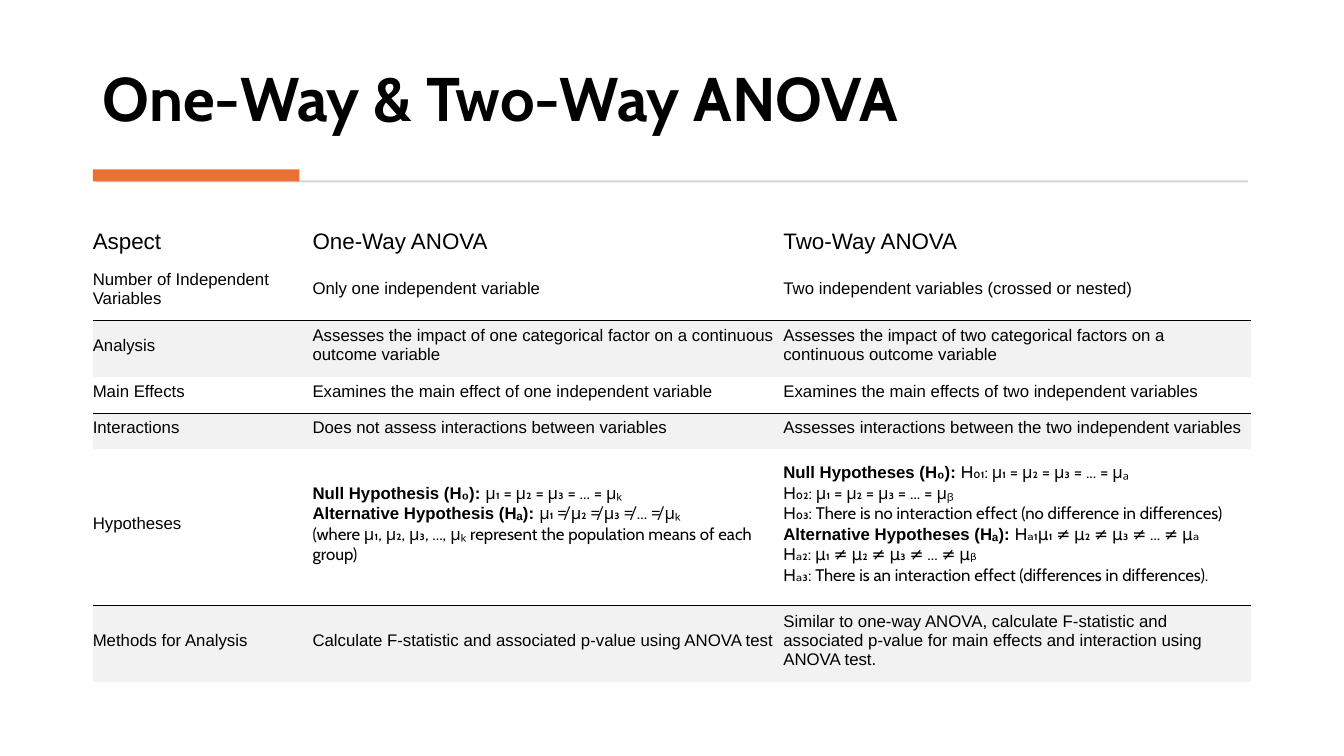
import pptx
import pptx.dml.color
import pptx.enum.text
import pptx.oxml
import pptx.oxml.ns
import pptx.util
from pptx.util import Inches

COLORS = {"text": "000000", "accent": "E97132", "rule": "D5D5D5", "band": "F2F2F2"}
ANCHOR = pptx.enum.text.MSO_ANCHOR
COLUMN_WIDTHS = [2.18, 4.67, 4.64]
ROW_HEIGHTS = [0.42, 0.56, 0.56, 0.36, 0.36, 1.55, 0.76]
ONE_WAY_HYPOTHESES = [
    ("Null Hypothesis (H₀): ", "μ₁ = μ₂ = μ₃ = ... = μₖ"),
    ("Alternative Hypothesis (Hₐ): ", "μ₁ ≠ μ₂ ≠ μ₃ ≠ ... ≠ μₖ"),
    ("", "(where μ₁, μ₂, μ₃, ..., μₖ represent the population means of each group)"),
]
TWO_WAY_HYPOTHESES = [
    ("Null Hypotheses (H₀): ", "H₀₁: μ₁ = μ₂ = μ₃ = ... = μₐ"),
    ("", "H₀₂: μ₁ = μ₂ = μ₃ = ... = μᵦ"),
    ("", "H₀₃: There is no interaction effect (no difference in differences)"),
    ("Alternative Hypotheses (Hₐ): ", "Hₐ₁μ₁ ≠ μ₂ ≠ μ₃ ≠ ... ≠ μₐ"),
    ("", "Hₐ₂: μ₁ ≠ μ₂ ≠ μ₃ ≠ ... ≠ μᵦ"),
    ("", "Hₐ₃: There is an interaction effect (differences in differences)."),
]
ROWS = [
    ["Aspect", "One-Way ANOVA", "Two-Way ANOVA"],
    ["Number of Independent Variables", "Only one independent variable",
     "Two independent variables (crossed or nested)"],
    ["Analysis",
     "Assesses the impact of one categorical factor on a continuous outcome variable",
     "Assesses the impact of two categorical factors on a continuous outcome variable"],
    ["Main Effects", "Examines the main effect of one independent variable",
     "Examines the main effects of two independent variables"],
    ["Interactions", "Does not assess interactions between variables",
     "Assesses interactions between the two independent variables"],
    ["Hypotheses", ONE_WAY_HYPOTHESES, TWO_WAY_HYPOTHESES],
    ["Methods for Analysis",
     "Calculate F-statistic and associated p-value using ANOVA test",
     "Similar to one-way ANOVA, calculate F-statistic and associated p-value "
     "for main effects and interaction using ANOVA test."],
]


def rgb(name):
    """Return the named colour."""
    return pptx.dml.color.RGBColor.from_string(COLORS[name])


def set_values(target, values):
    """Set each named attribute on the target."""
    for name, value in values.items():
        setattr(target, name, value)


def add_run(paragraph, text, size, font="Arial", bold=False):
    """Add one formatted run to a paragraph."""
    run = paragraph.add_run()
    run.text = text
    set_values(run.font, {"name": font, "size": pptx.util.Pt(size), "bold": bold})
    run.font.color.rgb = rgb("text")


def set_borders(cell, lined_sides):
    """Line the given sides of a cell and clear the others."""
    properties = cell._tc.get_or_add_tcPr()
    for index, side in enumerate("LRTB"):
        if side in lined_sides:
            fill = f'<a:solidFill><a:srgbClr val="{COLORS["text"]}"/></a:solidFill>'
        else:
            fill = "<a:noFill/>"
        line = pptx.oxml.parse_xml(
            f'<a:ln{side} {pptx.oxml.ns.nsdecls("a")} w="9525">{fill}</a:ln{side}>')
        properties.insert(index, line)


def fill_cell(cell, content, row_index):
    """Write and format one table cell."""
    header = row_index == 0
    shaded = not header and row_index % 2 == 0
    set_values(cell, {
        "vertical_anchor": ANCHOR.BOTTOM if header else ANCHOR.MIDDLE,
        "margin_left": 0,
        "margin_top": Inches(0.02 if header else 0.03),
        "margin_right": Inches(0.06),
        "margin_bottom": Inches(0.1),
    })
    if shaded:
        cell.fill.solid()
        cell.fill.fore_color.rgb = rgb("band")
    else:
        cell.fill.background()
    set_borders(cell, "" if header else "T" if shaded else "B")
    frame = cell.text_frame
    if isinstance(content, str):
        add_run(frame.paragraphs[0], content, 16 if header else 12)
        return
    for index, (label, formula) in enumerate(content):
        paragraph = frame.add_paragraph() if index else frame.paragraphs[0]
        if label:
            add_run(paragraph, label, 12, bold=True)
        add_run(paragraph, formula, 12, "Cabin")


def add_title(slide, left, top, width, height):
    """Place the slide title in its box."""
    title = slide.shapes.title
    set_values(title, {"left": Inches(left), "top": Inches(top),
                       "width": Inches(width), "height": Inches(height)})
    set_values(title.text_frame, {"vertical_anchor": ANCHOR.BOTTOM, "word_wrap": True,
                                  "auto_size": pptx.enum.text.MSO_AUTO_SIZE.NONE})
    paragraph = title.text_frame.paragraphs[0]
    set_values(paragraph, {"alignment": pptx.enum.text.PP_ALIGN.LEFT, "line_spacing": 0.9})
    add_run(paragraph, "One-Way & Two-Way ANOVA", 44, "Cabin", True)


def add_divider(slide, left, top, width, height):
    """Draw the thin rule and the accent bar at its left end."""
    bars = [("rule", 0.03, height - 0.01, width - 0.03, 0.02),
            ("accent", 0, 0, 2.05, height)]
    for color, offset_x, offset_y, bar_width, bar_height in bars:
        bar = slide.shapes.add_shape(
            pptx.enum.shapes.MSO_SHAPE.RECTANGLE, Inches(left + offset_x),
            Inches(top + offset_y), Inches(bar_width), Inches(bar_height))
        bar.shadow.inherit = False
        bar.fill.solid()
        bar.fill.fore_color.rgb = rgb(color)
        bar.line.fill.background()


def add_comparison_table(slide, left, top, width, height):
    """Build the comparison table in its box."""
    table = slide.shapes.add_table(
        len(ROWS), len(COLUMN_WIDTHS), Inches(left), Inches(top),
        Inches(width), Inches(height)).table
    set_values(table, {"first_row": False, "horz_banding": False})
    for column, column_width in zip(table.columns, COLUMN_WIDTHS):
        column.width = Inches(column_width)
    for row_index, (row, row_height) in enumerate(zip(table.rows, ROW_HEIGHTS)):
        row.height = Inches(row_height)
        for cell, content in zip(row.cells, ROWS[row_index]):
            fill_cell(cell, content, row_index)


def main():
    """Build and save the presentation."""
    presentation = pptx.Presentation()
    set_values(presentation, {"slide_width": Inches(13.33), "slide_height": Inches(7.5)})
    slide = presentation.slides.add_slide(presentation.slide_layouts[5])
    add_title(slide, 0.92, 0.28, 11.49, 1.11)
    add_divider(slide, 0.92, 1.68, 11.46, 0.12)
    add_comparison_table(slide, 0.92, 2.2, sum(COLUMN_WIDTHS), sum(ROW_HEIGHTS))
    presentation.save("out.pptx")


if __name__ == "__main__":
    main()
